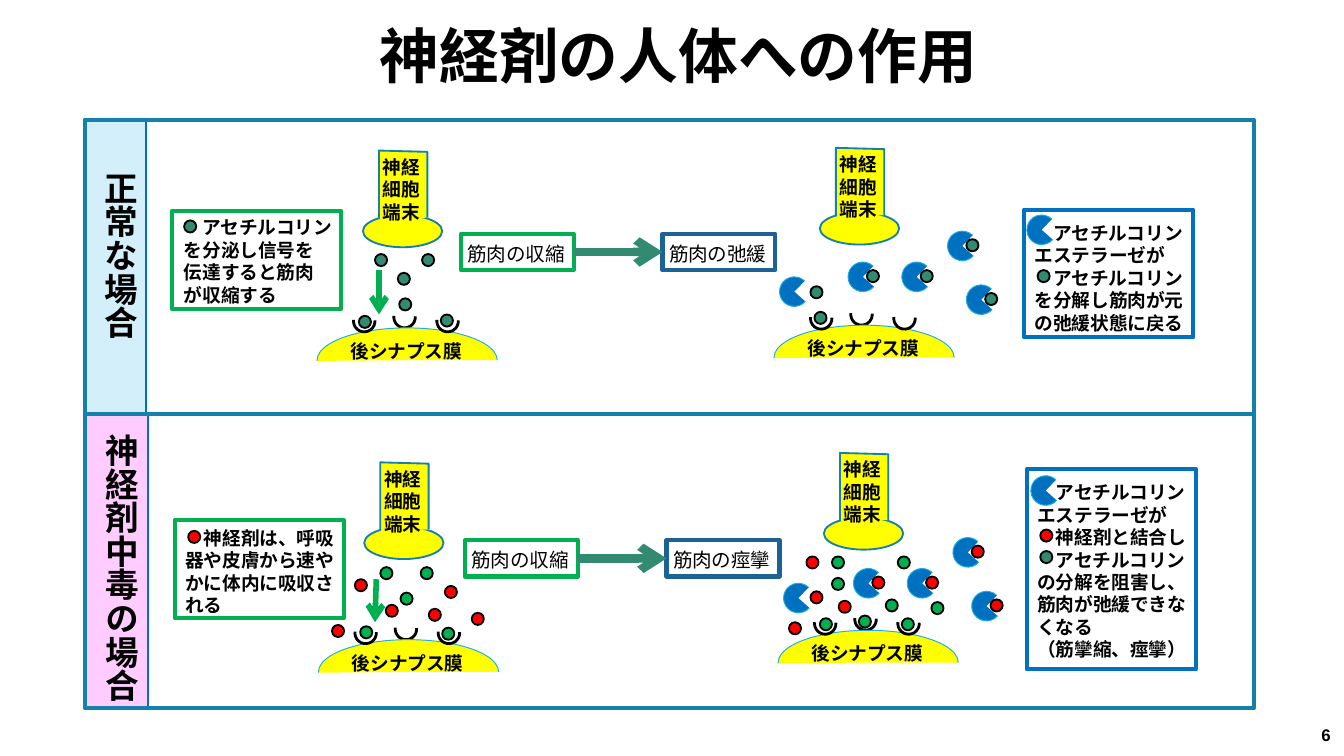
from lxml import etree
from pptx import Presentation, util as u
from pptx.dml.color import RGBColor
from pptx.enum import shapes, text
from pptx.oxml.ns import qn

PX = 9144  # 100 px to the inch
KINDS = shapes.MSO_SHAPE
ALIGN = text.PP_ALIGN
color = RGBColor.from_string
BLACK, YELLOW, RED = "000000", "FFFF00", "FF0000"
GREEN, TEAL, BLUE = "00B050", "328B71", "0070C0"
SKY, SEA, NAVY = "1CADE4", "1580A9", "1D6294"

deck = Presentation()
deck.slide_width = 1000 * PX
deck.slide_height = deck.slide_width * 9 // 16
page = deck.slides.add_slide(deck.slide_layouts[5])


def add_figure(kind, box, fill, line, weight, angles=(), rotation=0):
    """Add a preset shape; kind may also be a finished freeform shape."""
    if box:
        kind = page.shapes.add_shape(kind, *[side * PX for side in box])
    kind.shadow.inherit = False
    kind.rotation = rotation
    for index, angle in enumerate(angles):
        kind.adjustments[index] = angle
    if fill:
        kind.fill.solid()
        kind.fill.fore_color.rgb = color(fill)
    else:
        kind.fill.background()
    kind.line.color.rgb = color(line)
    kind.line.width = u.Pt(weight)
    return kind


def add_text(box, lines, size=10, bold=True, font="Calibri", align=None, wrap=True):
    label = page.shapes.add_textbox(*[side * PX for side in box])
    frame = label.text_frame
    frame.word_wrap = wrap
    frame.text = "\n".join(lines)
    for para in frame.paragraphs:
        para.alignment = align
        para.font.size = u.Pt(size)
        para.font.bold = bold
        para.font.name = font
        para.font.color.rgb = color(BLACK)
    return frame


# Title and page number
title = page.shapes.title
title.left, title.top, title.width, title.height = [n * PX for n in (74, 17, 862, 54)]
title.text_frame.text = "神経剤の人体への作用"
title.text_frame.vertical_anchor = text.MSO_ANCHOR.MIDDLE
para = title.text_frame.paragraphs[0]
para.alignment = ALIGN.CENTER
para.line_spacing = 0.9
para.font.size = u.Pt(32)
para.font.bold = True
para.font.name = "Calibri"
para.font.color.rgb = color(BLACK)
number = add_text((941, 533, 59, 27), ["6"], 9, font="Arial", align=ALIGN.RIGHT)
number.vertical_anchor = text.MSO_ANCHOR.MIDDLE

# The two cases: tinted heading and frame
for heading, fill, panel, label_box, frame_top, align in (
    ("神経剤中毒の場合", "FFCCFF", (64, 309, 46, 217), (60, 313, 50, 228), 308, None),
    ("正常な場合", "D2EFFA", (63, 90, 46, 218), (59, 118, 50, 169), 89, ALIGN.JUSTIFY),
):
    add_figure(KINDS.RECTANGLE, panel, fill, BLUE, 1)
    add_figure(KINDS.RECTANGLE, (63, frame_top, 870, 219), None, SEA, 2.25)
    label = add_text(label_box, [heading], 18, align=align)
    label._txBody.bodyPr.set("vert", "eaVert")

# Synapses: membrane, receptors and nerve ending
for x, y in ((236, 244), (576, 242), (237, 476), (579, 469)):
    for dx, dy in ((57, -16), (27, -13), (89, -13)):
        add_figure(KINDS.ARC, (x + dx, y + dy, 16, 16), None, BLACK, 1.5,
                   (162, 60.53), 85.8)
        if dx == 57:  # the middle receptor lies behind the membrane
            add_figure(KINDS.ARC, (x, y, 134, 48), YELLOW, SKY, 0.5, (107.71, 0))
    add_text((x + 15, y + 4, 126, 27), ["後シナプス膜"])
    add_figure(KINDS.OVAL, (x + 34, y - 84, 59, 24), YELLOW, SEA, 1)
    neck = page.shapes.build_freeform(x + 46, y - 81, scale=PX)
    neck.add_line_segments([(x + 46, y - 132), (x + 82, y - 131), (x + 82, y - 82)],
                           close=False)
    add_figure(neck.convert_to_shape(), None, YELLOW, SEA, 1)
    add_text((x + 39, y - 133, 86, 61), ["神経", "細胞", "端末"])

# Enzymes, all but the free and the legend ones holding a molecule
bound = [(671, 195), (705, 172), (719, 212), (631, 195)]
dots = {
    TEAL: [(279, 189), (328, 234), (297, 222), (267, 235), (296, 203), (314, 189),
           (606, 232), (603, 213), (137, 164), (772, 201), (774, 410)],
    GREEN: [(610, 460), (639, 458), (671, 460), (668, 414), (619, 414), (693, 448),
            (659, 446), (619, 430), (268, 466), (329, 467), (313, 422), (283, 422),
            (298, 441)],
    RED: [(587, 463), (624, 447), (603, 440), (600, 414), (140, 395), (247, 465),
          (287, 450), (331, 436), (264, 431), (319, 453), (351, 456), (774, 394)],
}
enzymes = [(580, 206), (583, 434), (764, 160), (767, 354)]
for x, y in bound:
    for dx, dy, fill in ((0, 0, TEAL), (4, 228, RED)):
        enzymes.append((x + dx, y + dy))
        dots[fill].append((x + dx + 14, y + dy + 6))
for x, y in enzymes:
    add_figure(KINDS.ARC, (x, y, 22, 22), BLUE, SKY, 0.5, (162, 109.42), 131.8)
for fill, places in dots.items():
    for x, y in places:
        add_figure(KINDS.OVAL, (x, y, 9, 9), fill, BLACK, 1)

# Explanations
for box, line, (x, y), lines in (
    ((128, 157, 126, 73), GREEN, (127, 156),
     ["　アセチルコリン", "を分泌し信号を", "伝達すると筋肉", "が収縮する"]),
    ((130, 387, 126, 73), GREEN, (128, 387),
     ["　神経剤は、呼吸器や皮膚から速やかに体内に吸収される"]),
    ((762, 156, 126, 95), BLUE, (760, 160),
     ["　アセチルコリンエステラーゼが", "　アセチルコリンを分解し筋肉が元の弛緩状態に戻る"]),
    ((764, 349, 126, 149), BLUE, (762, 353),
     ["　アセチルコリンエステラーゼが", "　神経剤と結合し", "　アセチルコリンの分解を阻害し、",
      "筋肉が弛緩できなくなる", "（筋攣縮、痙攣）"]),
):
    add_figure(KINDS.RECTANGLE, box, None, line, 2.25)
    add_text((x, y, 132, box[3]), lines)

# Muscle states and arrows
arrows = []
for x, y, after in ((343, 174, "筋肉の弛緩"), (346, 402, "筋肉の痙攣")):
    states = []
    for left, line, state in ((x, GREEN, "筋肉の収縮"), (x + 150, NAVY, after)):
        states.append(add_figure(KINDS.RECTANGLE, (left, y, 84, 27), None, line, 2.25))
        add_text((left - 5, y + 1, 94, 28), [state], 10.5, False, wrap=False)
    arrow = page.shapes.add_connector(shapes.MSO_CONNECTOR.STRAIGHT, 0, 0, 0, 0)
    arrow.begin_connect(states[0], 3)
    arrow.end_connect(states[1], 1)
    arrows.append((arrow, TEAL, 4.5))
for ends in ((282, 201, 282, 234), (280, 431, 279, 463)):
    arrow = page.shapes.add_connector(shapes.MSO_CONNECTOR.STRAIGHT,
                                      *[end * PX for end in ends])
    arrows.append((arrow, GREEN, 3))
for arrow, line, weight in arrows:
    arrow.line.color.rgb = color(line)
    arrow.line.width = u.Pt(weight)
    etree.SubElement(arrow.line._get_or_add_ln(), qn("a:tailEnd"), type="arrow")
    etree.SubElement(arrow._element.spPr, qn("a:effectLst"))

deck.save("out.pptx")
